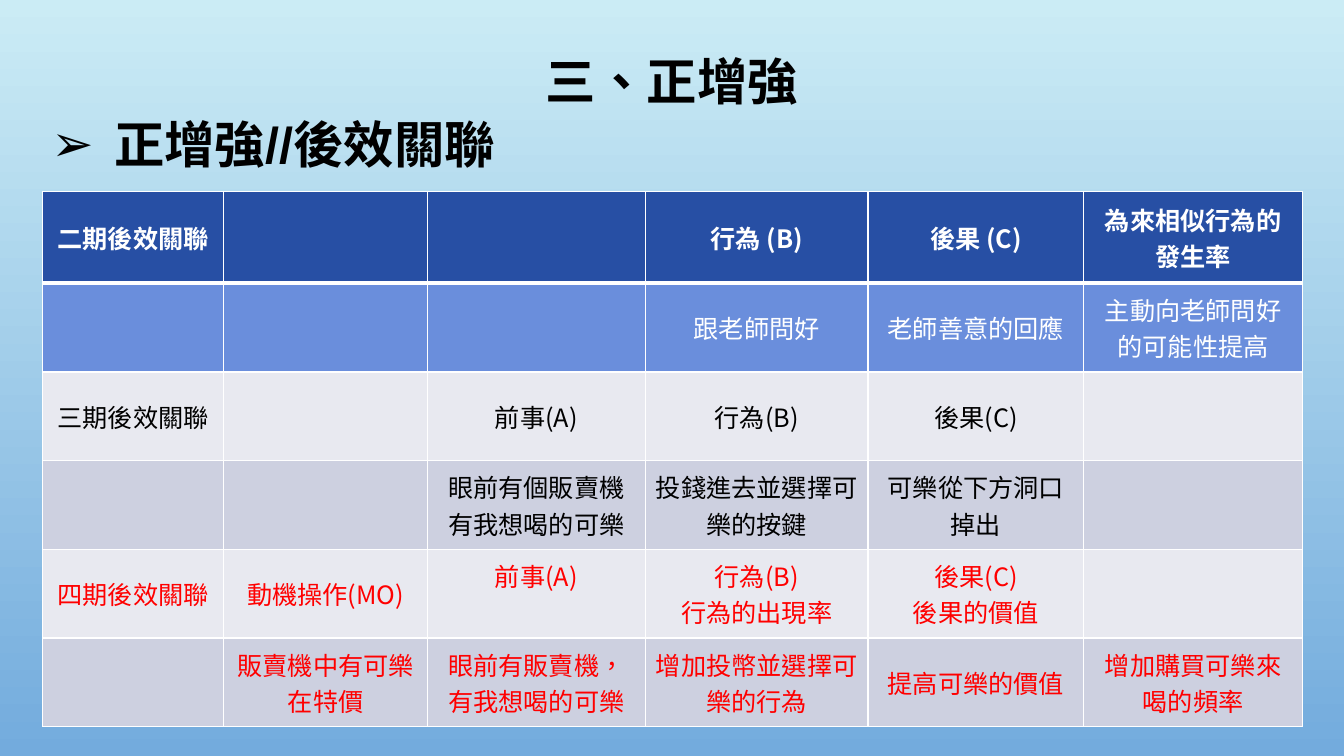
import pptx
import pptx.util
import pptx.dml.color
import pptx.enum.text
import pptx.oxml.ns
from dataclasses import dataclass
from lxml import etree

ALIGN = pptx.enum.text.PP_ALIGN
ANCHOR = pptx.enum.text.MSO_ANCHOR
SCALE = 9144  # EMU in one px, 100 px to the inch


@dataclass(frozen=True)
class Theme:
    sky: str = "CBECF5"
    sea: str = "73ABDD"
    navy: str = "274FA4"
    blue: str = "6A8EDC"
    pale: str = "E8E9F0"
    grey: str = "CDD0E0"
    white: str = "FFFFFF"
    black: str = "000000"
    red: str = "FF0000"
    head: int = 36
    body: int = 18
    sans: str = "Noto Sans CJK SC"
    trad: str = "Noto Sans CJK TC"
    latin: str = "Arial"


def px(n):
    return pptx.util.Emu(n * SCALE)


def rgb(code):
    return pptx.dml.color.RGBColor.from_string(code)


def sub(node, tag, **attrs):
    """Append a child such as a:ea and return it."""
    return etree.SubElement(node, pptx.oxml.ns.qn(tag), attrs)


class Page:
    def __init__(self, deck, theme):
        self.theme = theme
        self.slide = deck.slides.add_slide(deck.slide_layouts[6])

    def sky(self):
        fill = self.slide.background.fill
        fill.gradient()
        fill.gradient_angle = 270
        for stop, code in zip(fill.gradient_stops, (self.theme.sky, self.theme.sea)):
            stop.color.rgb = rgb(code)

    def run(self, para, text, size, color, bold=False, face=None):
        face = face or self.theme.sans
        run = para.add_run()
        run.text = text
        font = run.font
        font.size, font.bold, font.name = pptx.util.Pt(size), bold, face
        font.color.rgb = rgb(color)
        props = run._r.get_or_add_rPr()
        props.set("lang", "zh-TW")
        sub(props, "a:ea", typeface=face)

    def text(self, box, runs, wrap=True, bullet=None, space=None):
        """Add one centred line; runs holds (text, face) pairs."""
        frame = self.slide.shapes.add_textbox(*map(px, box)).text_frame
        frame.word_wrap = wrap
        frame.vertical_anchor = ANCHOR.MIDDLE
        para = frame.paragraphs[0]
        para.alignment = ALIGN.CENTER
        if space:
            para.line_spacing = space
        if bullet:
            props = para._p.get_or_add_pPr()
            props.set("marL", str(px(62)))
            props.set("indent", str(px(-62)))
            sub(props, "a:buFont", typeface=self.theme.latin)
            sub(props, "a:buChar", char=bullet)
        for words, face in runs:
            self.run(para, words, self.theme.head, self.theme.black, True, face)

    def edges(self, cell, base):
        """Draw white borders, with the bottom one base points wide."""
        props = cell._tc.get_or_add_tcPr()
        for at, (side, wide) in enumerate(zip("LRTB", (1, 1, 1, base))):
            line = sub(props, "a:ln" + side, w=str(pptx.util.Pt(wide)))
            sub(sub(line, "a:solidFill"), "a:srgbClr", val=self.theme.white)
            props.insert(at, line)

    def cell(self, cell, text, fill, color, first):
        cell.fill.solid()
        cell.fill.fore_color.rgb = rgb(fill)
        cell.vertical_anchor = ANCHOR.MIDDLE
        self.edges(cell, 3 if first else 1)
        frame = cell.text_frame
        for n, words in enumerate(text.split("\n") if text else []):
            para = frame.add_paragraph() if n else frame.paragraphs[0]
            para.alignment = ALIGN.CENTER
            self.run(para, words, self.theme.body, color, first)

    def table(self, left, top, wides, highs, rows, looks):
        """Add a table; looks gives each row its (fill, text colour)."""
        box = map(px, (left, top, sum(wides), sum(highs)))
        table = self.slide.shapes.add_table(len(highs), len(wides), *box).table
        table.first_row = table.horz_banding = False
        for col, wide in zip(table.columns, wides):
            col.width = px(wide)
        for r, (high, row, look) in enumerate(zip(highs, rows, looks)):
            table.rows[r].height = px(high)
            for c, text in enumerate(row):
                self.cell(table.cell(r, c), text, *look, r == 0)
        return table


ROWS = [
    ["二期後效關聯", "", "", "行為 (B)", "後果 (C)", "為來相似行為的發生率"],
    ["", "", "", "跟老師問好", "老師善意的回應", "主動向老師問好的可能性提高"],
    ["三期後效關聯", "", "前事(A)", "行為(B)", "後果(C)", ""],
    ["", "", "眼前有個販賣機有我想喝的可樂", "投錢進去並選擇可樂的按鍵",
     "可樂從下方洞口掉出", ""],
    ["四期後效關聯", "動機操作(MO)", "前事(A)", "行為(B)\n行為的出現率",
     "後果(C)\n後果的價值", ""],
    ["", "販賣機中有可樂在特價", "眼前有販賣機，有我想喝的可樂",
     "增加投幣並選擇可樂的行為", "提高可樂的價值", "增加購買可樂來喝的頻率"],
]


def main():
    deck = pptx.Presentation()
    deck.slide_width, deck.slide_height = px(1333), px(750)
    theme = Theme()
    page = Page(deck, theme)
    page.sky()
    page.text((28, 107, 486, 71),
              [("正增強", theme.trad), ("//", theme.latin),
               ("後效", theme.trad), ("關聯", theme.sans)],
              wrap=False, bullet="➢")
    looks = [(theme.navy, theme.white), (theme.blue, theme.white),
             (theme.pale, theme.black), (theme.grey, theme.black),
             (theme.pale, theme.red), (theme.grey, theme.red)]
    table = page.table(42, 190, [180, 202, 216, 221, 214, 217],
                       [91] + [88] * 5, ROWS, looks)
    cue = table.cell(4, 2)
    cue.vertical_anchor = ANCHOR.TOP
    cue.margin_top = px(8)
    page.text((100, -4, 1133, 175), [("三、正增強", theme.sans)], space=0.9)
    deck.save("out.pptx")


if __name__ == "__main__":
    main()
